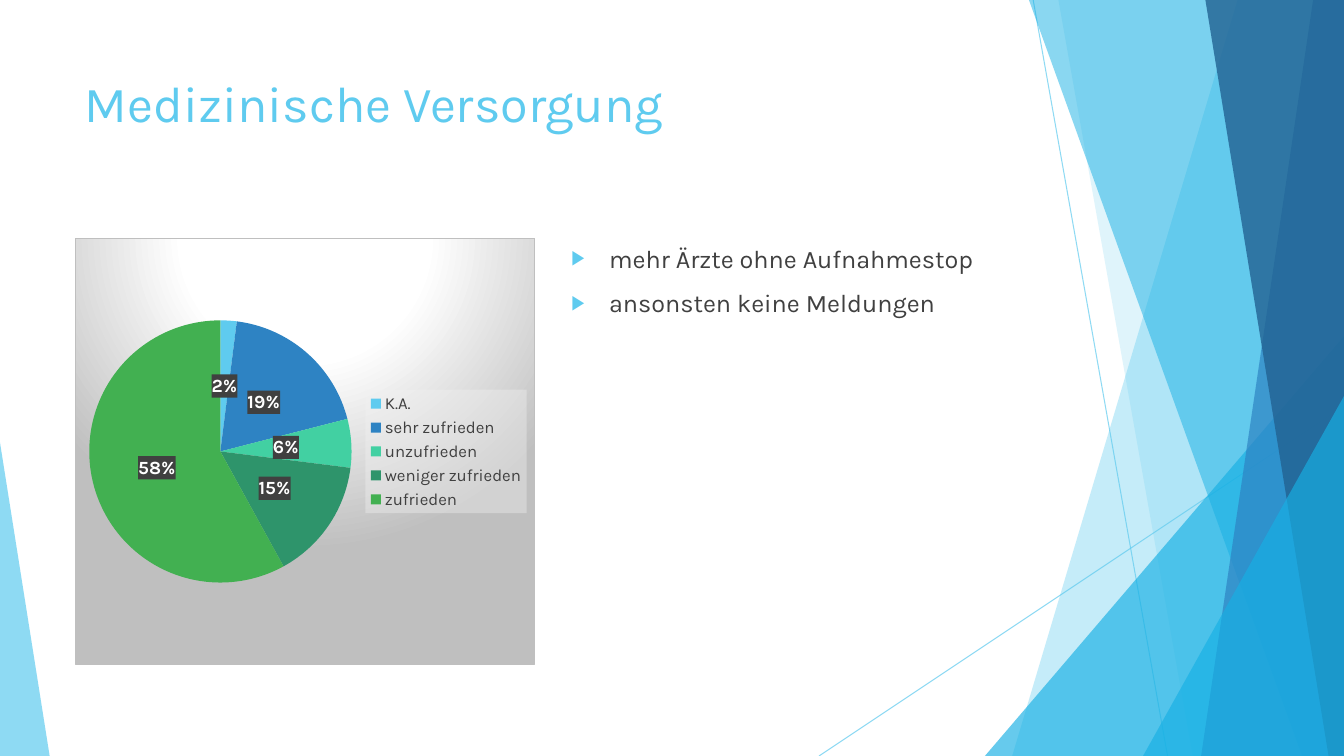
"""Build the slide on satisfaction with medical care: a pie chart beside two remarks."""
from lxml import etree
from pptx import Presentation
from pptx.chart.data import CategoryChartData
from pptx.dml.color import RGBColor
from pptx.enum.chart import XL_CHART_TYPE, XL_LABEL_POSITION, XL_LEGEND_POSITION
from pptx.enum.shapes import MSO_CONNECTOR, MSO_SHAPE
from pptx.enum.text import MSO_ANCHOR, PP_ALIGN
from pptx.oxml import parse_xml
from pptx.oxml.ns import nsdecls, qn
from pptx.util import Pt

PIE = XL_CHART_TYPE.PIE
CENTER = XL_LABEL_POSITION.CENTER
RIGHT = XL_LEGEND_POSITION.RIGHT
STRAIGHT = MSO_CONNECTOR.STRAIGHT
TRIANGLE = MSO_SHAPE.ISOSCELES_TRIANGLE
TOP = MSO_ANCHOR.TOP
LEFT = PP_ALIGN.LEFT

FONT = "Karla"
WIDTH, HEIGHT = 960, 540
COLORS = {
    "sky": "5FCBEF", "cyan": "17B0E4", "blue": "2E83C3", "navy": "226292",
    "mint": "42D0A2", "pine": "2E946B", "green": "42B051",
    "text": "404040", "white": "FFFFFF", "silver": "BFBFBF", "pale": "F2F2F2",
}


def rgb(name):
    """Return the named colour."""
    return RGBColor.from_string(COLORS[name])


def write(frame, text, size, color, bullet=None, space_before=0):
    """Fill a text frame with one paragraph per line of text."""
    frame.word_wrap = True
    frame.vertical_anchor = TOP
    frame.text = text
    for paragraph in frame.paragraphs:
        paragraph.alignment = LEFT
        paragraph.space_before = Pt(space_before)
        font = paragraph.runs[0].font
        font.size = Pt(size)
        font.name = FONT
        font.color.rgb = rgb(color)
        if bullet:
            properties = paragraph._p.get_or_add_pPr()
            properties.set("marL", str(Pt(27)))
            properties.set("indent", str(-Pt(27)))
            marker = etree.SubElement(properties, qn("a:buClr"))
            etree.SubElement(marker, qn("a:srgbClr"), val=COLORS["sky"])
            etree.SubElement(properties, qn("a:buSzPct"), val="80000")
            etree.SubElement(properties, qn("a:buFont"), typeface="Arial")
            etree.SubElement(properties, qn("a:buChar"), char=bullet)


prs = Presentation()
prs.slide_width, prs.slide_height = Pt(WIDTH), Pt(HEIGHT)
slide = prs.slides.add_slide(prs.slide_layouts[5])
shapes = slide.shapes

rays = [(738, 0, 834, HEIGHT), (WIDTH, 290, 585, HEIGHT)]
for ray in rays:
    line = shapes.add_connector(STRAIGHT, *map(Pt, ray))
    line.line.color.rgb = rgb("sky")
    line.line.width = Pt(0.75)
    for tint in line.element.iter(qn("a:srgbClr")):
        etree.SubElement(tint, qn("a:alpha"), val="70000")
    etree.SubElement(line.element.spPr, qn("a:effectLst"))

facets = [
    ("band", (884, 723), "sky", 36),
    ("band", (756, 852), "sky", 20),
    ("triangle", (703.5, 240, 256.5, 1), "cyan", 66),
    ("band", (735, 930), "cyan", 50),
    ("band", (938, 858), "blue", 70),
    ("band", (861, 949), "navy", 80),
    ("triangle", (816.5, 283, 143.5, 1), "cyan", 66),
    ("triangle", (0, 316, 35.5, 0), "sky", 70),
]
for kind, place, color, opacity in facets:
    if kind == "band":
        top_x, bottom_x = place
        outline = shapes.build_freeform(Pt(top_x), Pt(0))
        corners = [(WIDTH, 0), (WIDTH, HEIGHT), (bottom_x, HEIGHT)]
        outline.add_line_segments([(Pt(x), Pt(y)) for x, y in corners])
        facet = outline.convert_to_shape()
    else:
        left, top, width, apex = place
        facet = shapes.add_shape(TRIANGLE, Pt(left), Pt(top), Pt(width), Pt(HEIGHT - top))
        facet.adjustments[0] = apex
    facet.shadow.inherit = False
    facet.line.fill.background()
    facet.fill.solid()
    facet.fill.fore_color.rgb = rgb(color)
    for tint in facet.element.iter(qn("a:srgbClr")):
        etree.SubElement(tint, qn("a:alpha"), val=str(opacity * 1000))

title = shapes.title
title.left, title.top, title.width, title.height = Pt(53.5), Pt(48), Pt(677), Pt(104)
write(title.text_frame, "Medizinische Versorgung", size=36, color="sky")

remarks = shapes.add_textbox(Pt(401), Pt(170), Pt(330), Pt(305))
write(remarks.text_frame, "mehr Ärzte ohne Aufnahmestop\nansonsten keine Meldungen",
      size=18, color="text", bullet="▶", space_before=10)

answers = [
    ("K.A.", 2, "sky"),
    ("sehr zufrieden", 19, "blue"),
    ("unzufrieden", 6, "mint"),
    ("weniger zufrieden", 15, "pine"),
    ("zufrieden", 58, "green"),
]
data = CategoryChartData()
data.categories = [answer for answer, share, color in answers]
data.add_series("Series 1", [share for answer, share, color in answers])
chart = shapes.add_chart(PIE, Pt(53.5), Pt(170), Pt(329), Pt(305), data).chart
chart.has_title = False
chart.font.size = Pt(10)
chart.font.name = FONT

chart.has_legend = True
legend = chart.legend
legend.position = RIGHT
legend.include_in_layout = False
legend.font.size = Pt(12)
legend.font.name = FONT
legend.font.color.rgb = rgb("text")

plot = chart.plots[0]
plot.vary_by_categories = True
for index, (answer, share, color) in enumerate(answers):
    slice_fill = plot.series[0].points[index].format.fill
    slice_fill.solid()
    slice_fill.fore_color.rgb = rgb(color)

plot.has_data_labels = True
labels = plot.data_labels
labels.show_percentage = True
labels.show_value = False
labels.number_format = "0%"
labels.number_format_is_linked = False
labels.position = CENTER
labels.font.size = Pt(13.3)
labels.font.bold = True
labels.font.name = FONT
labels.font.color.rgb = rgb("white")

stops = "".join(
    f'<a:gs pos="{position}000"><a:srgbClr val="{COLORS[color]}"/></a:gs>'
    for position, color in [(0, "white"), (39, "white"), (100, "silver")])
backdrop = (
    f'<a:gradFill><a:gsLst>{stops}</a:gsLst><a:path path="circle">'
    '<a:fillToRect l="50000" t="-80000" r="50000" b="180000"/></a:path></a:gradFill>'
    f'<a:ln w="{Pt(0.75)}"><a:solidFill><a:srgbClr val="{COLORS["silver"]}"/></a:solidFill></a:ln>')
veil = '<a:solidFill><a:srgbClr val="{}"><a:alpha val="{}000"/></a:srgbClr></a:solidFill>'
chart_space = chart.element
panels = [
    (chart_space, backdrop),
    (chart_space.find(".//" + qn("c:legend")), veil.format(COLORS["pale"], 39)),
    (chart_space.find(".//" + qn("c:dLbls")), veil.format(COLORS["text"], 90)),
]
for parent, fill in panels:
    panel = parse_xml(f'<c:spPr {nsdecls("c", "a")}>{fill}</c:spPr>')
    parent.find(qn("c:txPr")).addprevious(panel)

prs.save("out.pptx")
